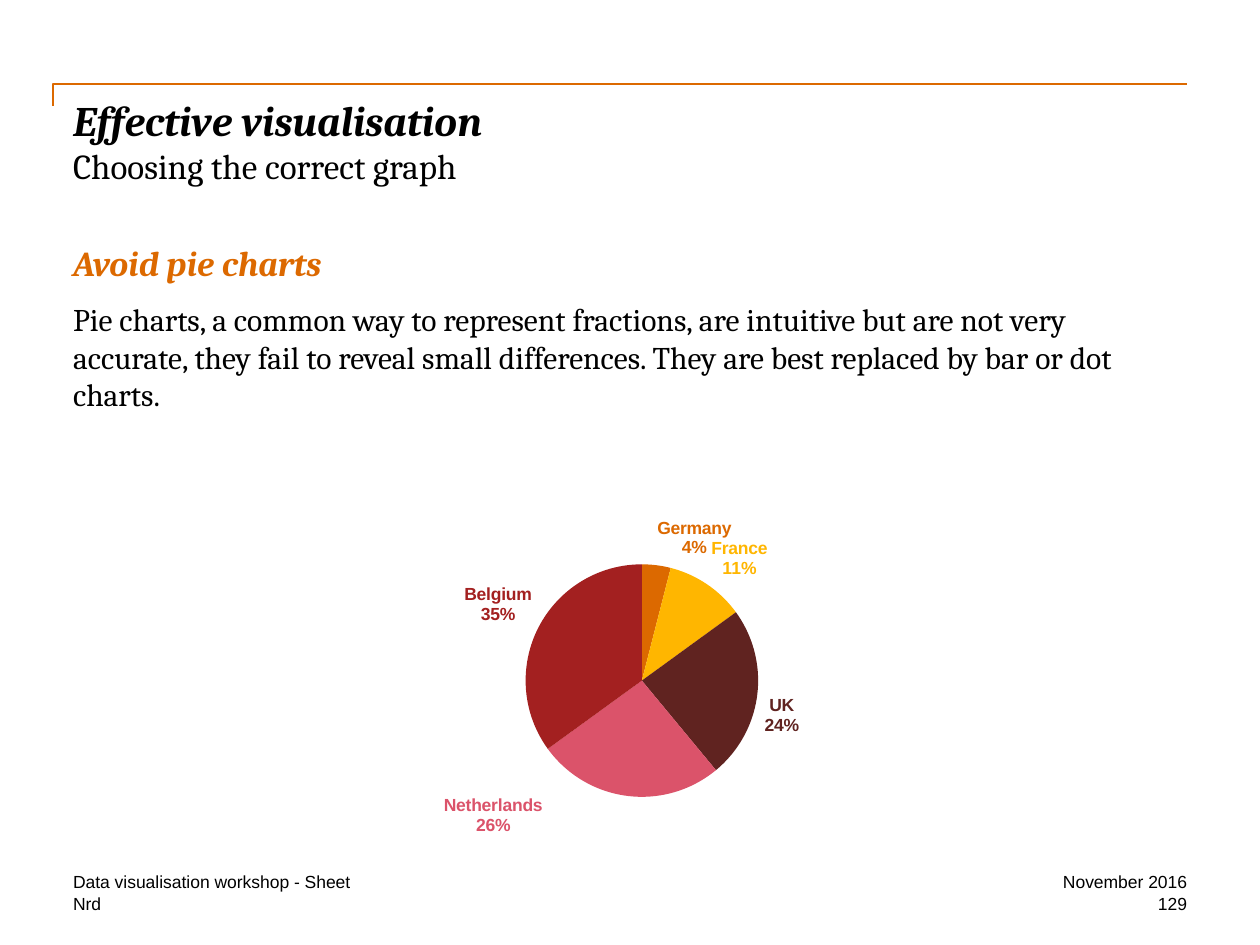
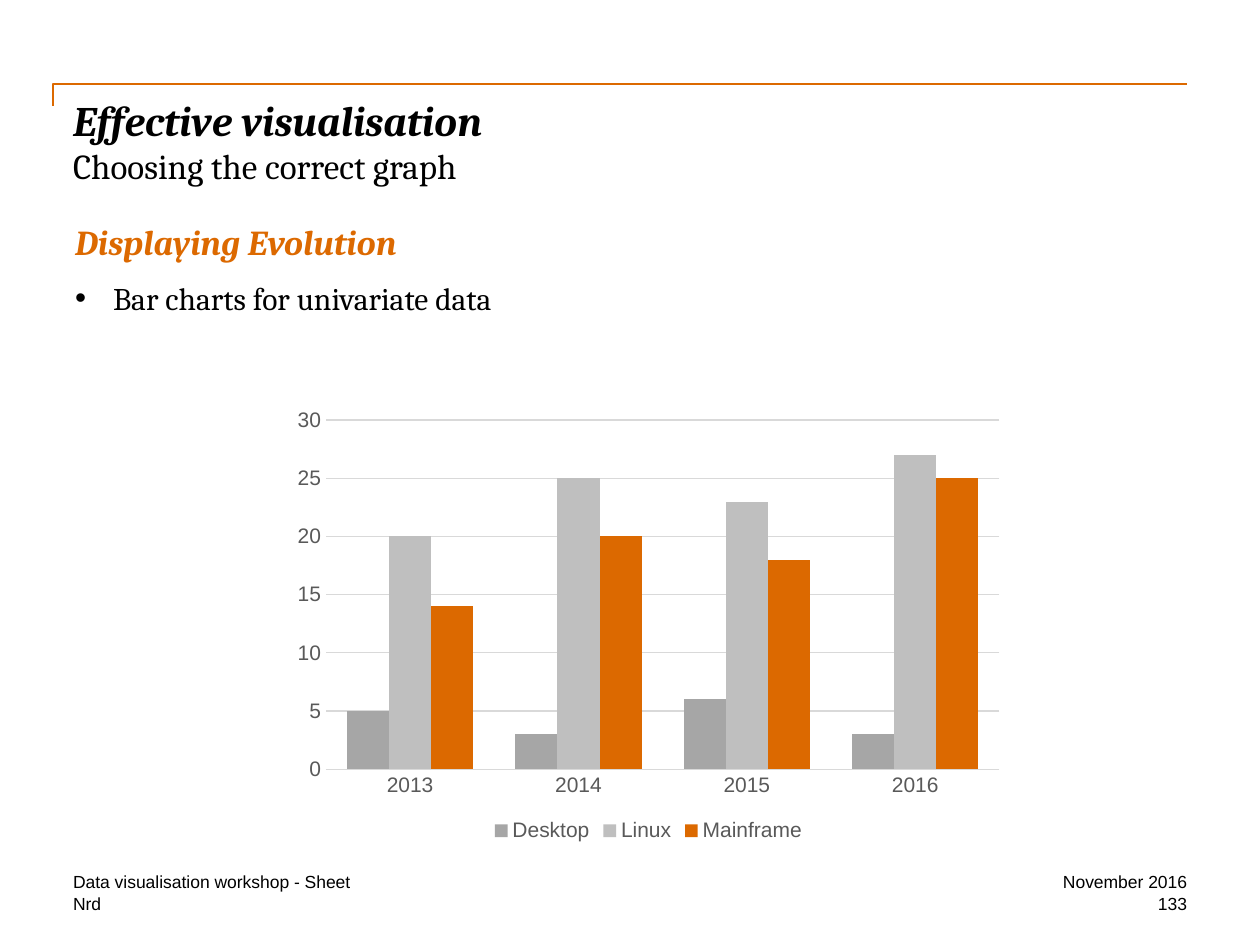
import pptx
import pptx.util
import pptx.chart.data
import pptx.dml.color
import pptx.enum.chart
import pptx.enum.shapes
import pptx.enum.text
import pptx.oxml
import pptx.oxml.ns
import lxml.etree


class Theme:
    black, orange, gray, grid = "000000", "DC6900", "595959", "D9D9D9"
    pie = ["DC6900", "FFB600", "602320", "DB536A", "A32020"]
    bars = ["A6A6A6", "BFBFBF", "DC6900"]
    serif, sans = "Cambria", "Arial"
    title, head, body, axis, small = 24, 20, 18, 12, 10


scale = 914400 / 126
px = lambda *nums: [pptx.util.Emu(round(num * scale)) for num in nums]
rgb = pptx.dml.color.RGBColor.from_string
qn = pptx.oxml.ns.qn
align = pptx.enum.text.PP_ALIGN
anchor = pptx.enum.text.MSO_ANCHOR
kind = pptx.enum.chart.XL_CHART_TYPE


def style(font, size, color=Theme.black, face=Theme.sans, strong=False, slant=False):
    font.name, font.size = face, pptx.util.Pt(size)
    font.bold, font.italic = strong, slant
    font.color.rgb = rgb(color)


def frame(shape, text, side=align.LEFT, hold=anchor.TOP):
    area = shape.text_frame
    area.text = text
    area.word_wrap = True
    area.auto_size = pptx.enum.text.MSO_AUTO_SIZE.NONE
    area.vertical_anchor = hold
    area.margin_left = area.margin_top = area.margin_right = area.margin_bottom = 0
    for line in area.paragraphs:
        line.alignment = side
    return area.paragraphs


deck = pptx.Presentation()
deck.slide_width, deck.slide_height = px(1260, 945)

pages = [
    dict(num="129", box=(73, 242, 1113, 620), head="Avoid pie charts", bullet=False,
         body="Pie charts, a common way to represent fractions, are intuitive but are not very "
              "accurate, they fail to reveal small differences. They are best replaced by bar or dot charts.",
         type=kind.PIE, plot=(306, 503, 646, 359),
         cats=["Germany", "France", "UK", "Netherlands", "Belgium"],
         data={"Series 1": [4, 11, 24, 26, 35]}),
    dict(num="133", box=(75, 221, 1042, 287), head="Displaying Evolution", bullet=True,
         body="Bar charts for univariate data",
         type=kind.COLUMN_CLUSTERED, plot=(283, 400, 731, 447),
         cats=["2013", "2014", "2015", "2016"],
         data={"Desktop": [5, 3, 6, 3], "Linux": [20, 25, 23, 27], "Mainframe": [14, 20, 18, 25]}),
]
charts = []

for page in pages:
    slide = deck.slides.add_slide(deck.slide_layouts[5])

    rule = slide.shapes.add_connector(
        pptx.enum.shapes.MSO_CONNECTOR.ELBOW, *px(631, 662, 609, -472))
    rule.line.color.rgb = rgb(Theme.orange)
    rule.line.width = pptx.util.Pt(1)
    props = rule.element.spPr
    props.find(qn("a:xfrm")).set("rot", "5400000")
    props.find(qn("a:prstGeom")).set("prst", "bentConnector2")
    lxml.etree.SubElement(props, qn("a:effectLst"))

    title = slide.shapes.title
    title.left, title.top, title.width, title.height = px(73, 94, 1113, 126)
    line = frame(title, "Effective visualisation\vChoosing the correct graph")[0]
    style(line.runs[0].font, Theme.title, face=Theme.serif, strong=True, slant=True)
    style(line.runs[1].font, Theme.head, face=Theme.serif)

    box = slide.shapes.add_textbox(*px(*page["box"]))
    head, body = frame(box, page["head"] + "\n" + page["body"])
    if page["bullet"]:
        props = body._p.get_or_add_pPr()
        props.set("marL", str(px(38)[0]))
        props.set("indent", str(px(-38)[0]))
        lxml.etree.SubElement(props, qn("a:buFont")).set("typeface", Theme.sans)
        lxml.etree.SubElement(props, qn("a:buChar")).set("char", "•")
    head.space_after = body.space_after = pptx.util.Pt(9)
    style(head.runs[0].font, Theme.head, Theme.orange, Theme.serif, True, True)
    style(body.runs[0].font, Theme.body, face=Theme.serif)

    for text, spot, side, hold in [
        ("Data visualisation workshop - Sheet", (73, 871, 725, 21), align.LEFT, anchor.BOTTOM),
        ("Nrd", (73, 893, 357, 21), align.LEFT, anchor.TOP),
        ("November 2016", (977, 871, 210, 21), align.RIGHT, anchor.TOP),
        (page["num"], (977, 893, 210, 21), align.RIGHT, anchor.TOP),
    ]:
        note = frame(slide.shapes.add_textbox(*px(*spot)), text, side, hold)[0]
        style(note.runs[0].font, Theme.small)

    data = pptx.chart.data.CategoryChartData()
    data.categories = page["cats"]
    for name, vals in page["data"].items():
        data.add_series(name, vals)
    chart = slide.shapes.add_chart(page["type"], *px(*page["plot"]), data).chart
    chart.has_title = chart.has_legend = False
    style(chart.font, Theme.small)
    charts.append(chart)

pie, bars = charts

plot = pie.plots[0]
plot.vary_by_categories = True
for index, color in enumerate(Theme.pie):
    point = plot.series[0].points[index]
    point.format.fill.solid()
    point.format.fill.fore_color.rgb = rgb(color)
    label = point.data_label
    style(label.font, Theme.small, color, strong=True)
    label.position = pptx.enum.chart.XL_LABEL_POSITION.OUTSIDE_END

place = '<c:layout %s><c:manualLayout>%s</c:manualLayout></c:layout>'
space = pptx.oxml.ns.nsdecls("c")
root = pie._chartSpace
for label in root.xpath(".//c:dLbl"):
    for tag, flag in [("showVal", "0"), ("showCatName", "1"), ("showPercent", "1")]:
        label.find(qn("c:" + tag)).set("val", flag)
    lxml.etree.SubElement(label, qn("c:separator")).text = "\n"
for leader in root.xpath(".//c:showLeaderLines"):
    leader.set("val", "0")
shift = '<c:x val="-0.13"/><c:y val="-0.02"/>'
root.xpath(".//c:dLbl")[3].insert(1, pptx.oxml.parse_xml(place % (space, shift)))
area = root.xpath(".//c:plotArea")[0]
for old in area.findall(qn("c:layout")):
    area.remove(old)
inner = '<c:layoutTarget val="inner"/><c:xMode val="edge"/><c:yMode val="edge"/>'
sizes = "".join('<c:%s val="%s"/>' % pair for pair in zip("xywh", (0.34, 0.17, 0.36, 0.65)))
area.insert(0, pptx.oxml.parse_xml(place % (space, inner + sizes)))

plot = bars.plots[0]
plot.vary_by_categories = False
plot.gap_width, plot.overlap = 100, 0
for series, color in zip(plot.series, Theme.bars):
    series.format.fill.solid()
    series.format.fill.fore_color.rgb = rgb(color)
for axis in (bars.category_axis, bars.value_axis):
    axis.major_tick_mark = axis.minor_tick_mark = pptx.enum.chart.XL_TICK_MARK.NONE
    style(axis.tick_labels.font, Theme.axis, Theme.gray)
axis = bars.value_axis
axis.minimum_scale, axis.maximum_scale, axis.major_unit = 0, 30, 5
axis.has_major_gridlines = True
axis.format.line.fill.background()
for edge in (axis.major_gridlines.format.line, bars.category_axis.format.line):
    edge.color.rgb = rgb(Theme.grid)
    edge.width = pptx.util.Pt(0.75)
bars.has_legend = True
bars.legend.position = pptx.enum.chart.XL_LEGEND_POSITION.BOTTOM
bars.legend.include_in_layout = False
style(bars.legend.font, Theme.axis, Theme.gray)

deck.save("out.pptx")
